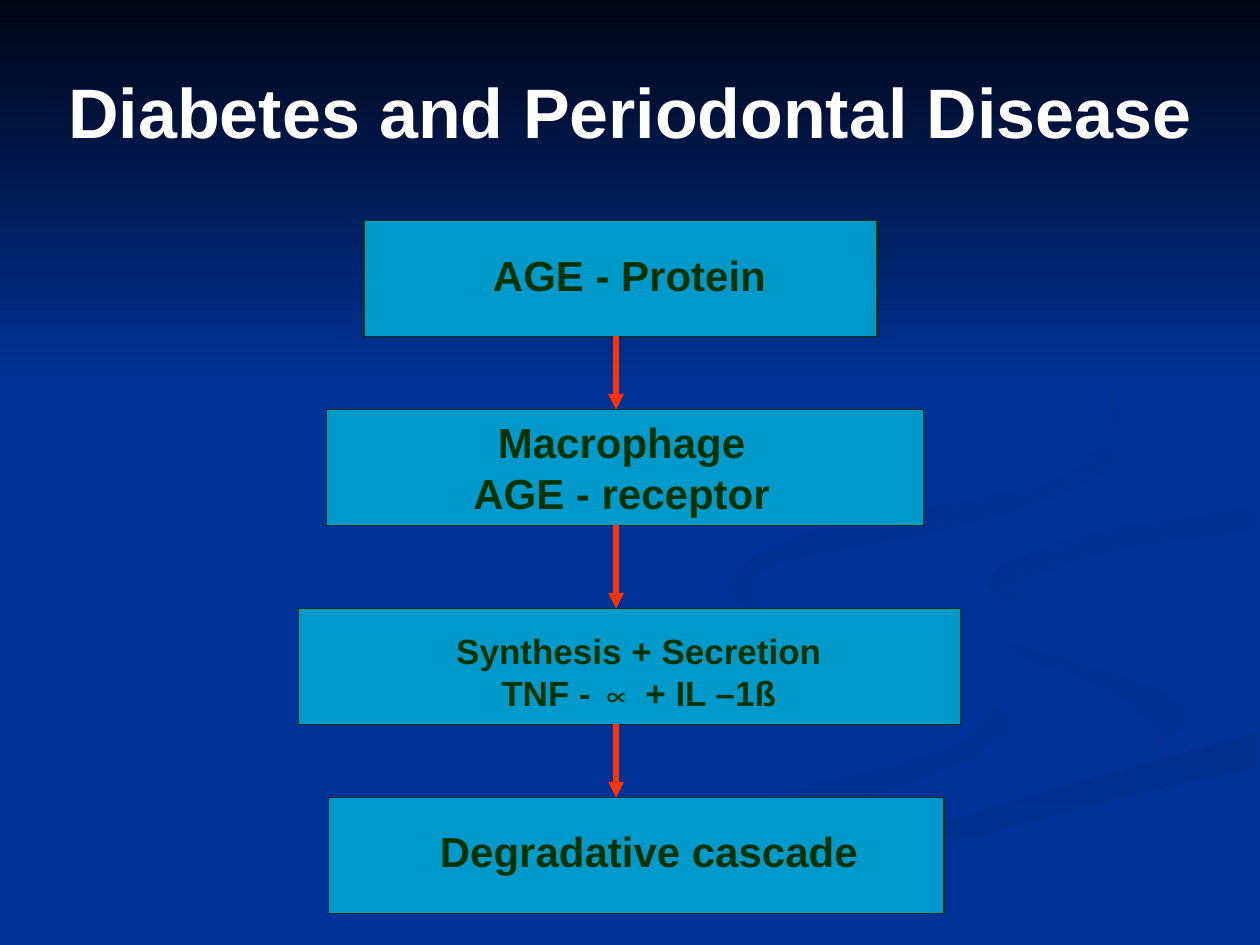
from lxml import etree
from pptx import Presentation
from pptx.dml.color import RGBColor
from pptx.enum.shapes import MSO_CONNECTOR, MSO_SHAPE
from pptx.enum.text import MSO_ANCHOR, PP_ALIGN
from pptx.oxml.ns import qn
from pptx.util import Cm, Pt

STRAIGHT = MSO_CONNECTOR.STRAIGHT
RECT = MSO_SHAPE.RECTANGLE
CENTER = PP_ALIGN.CENTER
TOP, MIDDLE = MSO_ANCHOR.TOP, MSO_ANCHOR.MIDDLE

BLUE = RGBColor.from_string("003399")
NIGHT = RGBColor.from_string("000514")
SHADE = RGBColor.from_string("003193")
DEEP = RGBColor.from_string("002F8C")
DIM = RGBColor.from_string("003091")
DUSK = RGBColor.from_string("002F8E")
TEAL = RGBColor.from_string("0099CC")
GREEN = RGBColor.from_string("003300")
RED = RGBColor.from_string("FF3300")
WHITE = RGBColor.from_string("FFFFFF")

TITLE = "Diabetes and Periodontal Disease"
STEPS = [
    ("AGE - Protein", 24, (7.34, 4.45, 10.34), (8.46, 4.9, 8.46, 1.27)),
    ("Macrophage AGE - receptor", 24, (6.58, 8.26, 12.04), (9.14, 8.28, 6.78, 2.29)),
    ("Synthesis + Secretion TNF - ∝ + IL –1ß", 20, (6.02, 12.27, 13.34), (8.46, 12.57, 8.84, 1.96)),
    ("Degradative cascade", 24, (6.63, 16.08, 12.4), (7.72, 16.51, 10.72, 1.27)),
]
STEP_H = 2.33
ARROW_X = 12.42

UNIT = Cm(2.54) / 100
CUTS = 6
WAVES = [
    (SHADE, BLUE, 180,
     [(781, 553), (800, 581), (721, 623), (532, 674), (361, 749)],
     [(300, 749), (499, 661), (739, 598), (785, 562), (781, 553)]),
    (BLUE, SHADE, 45,
     [(724, 464), (758, 498), (888, 535), (943, 570), (894, 605)],
     [(894, 605), (918, 581), (868, 544), (746, 500), (724, 464)]),
    (DEEP, BLUE, 90,
     [(503, 749), (630, 693), (797, 638), (998, 581)],
     [(998, 609), (821, 651), (649, 710), (571, 749)]),
    (DIM, BLUE, 45,
     [(998, 402), (865, 424), (781, 460), (826, 496)],
     [(826, 496), (809, 466), (878, 439), (998, 420)]),
    (DUSK, BLUE, 45,
     [(762, 233), (864, 291), (889, 362), (786, 412), (605, 452), (622, 500)],
     [(622, 500), (577, 462), (649, 420), (842, 378), (876, 306), (762, 233)]),
]


def put(item, values):
    for key, value in values.items():
        setattr(item, key, value)


def curve(points):
    padded = [points[0], *points, points[-1]]
    for a, b, c, d in zip(padded, padded[1:], padded[2:], padded[3:]):
        for cut in range(CUTS):
            t = cut / CUTS
            yield tuple(
                q + t * ((r - p) + t * ((2 * p - 5 * q + 4 * r - s) + t * (3 * q - 3 * r + s - p))) / 2
                for p, q, r, s in zip(a, b, c, d))
    yield points[-1]


def fade(shape, first, last, angle):
    shape.shadow.inherit = False
    shape.line.fill.background()
    shape.fill.gradient()
    shape.fill.gradient_angle = (360 - angle) % 360
    for stop, color in zip(shape.fill.gradient_stops, (first, last)):
        stop.color.rgb = color


def wave(shapes, first, last, angle, out, back):
    points = [*curve(out), *curve(back)]
    build = shapes.build_freeform(*points[0], scale=UNIT)
    build.add_line_segments(points[1:], close=True)
    fade(build.convert_to_shape(), first, last, angle)


def label(shapes, text, size, color, area, anchor):
    frame = shapes.add_textbox(*map(Cm, area)).text_frame
    put(frame, {"word_wrap": True, "vertical_anchor": anchor})
    line = frame.paragraphs[0]
    line.alignment = CENTER
    run = line.add_run()
    run.text = text
    put(run.font, {"name": "Arial", "size": Pt(size), "bold": True})
    run.font.color.rgb = color


def box(shapes, left, top, width):
    shape = shapes.add_shape(RECT, Cm(left), Cm(top), Cm(width), Cm(STEP_H))
    shape.shadow.inherit = False
    shape.fill.solid()
    shape.fill.fore_color.rgb = TEAL
    shape.line.color.rgb = GREEN
    shape.line.width = Pt(0.75)


def arrow(shapes, start, end):
    link = shapes.add_connector(STRAIGHT, Cm(ARROW_X), Cm(start), Cm(ARROW_X), Cm(end))
    link.line.color.rgb = RED
    link.line.width = Pt(3)
    props = link._element.spPr
    etree.SubElement(props.find(qn("a:ln")), qn("a:tailEnd"), type="triangle")
    etree.SubElement(props, qn("a:effectLst"))


def main():
    deck = Presentation()
    put(deck, {"slide_width": Cm(25.4), "slide_height": Cm(19.05)})
    slide = deck.slides.add_slide(deck.slide_layouts[6])
    slide.background.fill.solid()
    slide.background.fill.fore_color.rgb = BLUE
    shapes = slide.shapes
    for item in WAVES:
        wave(shapes, *item)
    fade(shapes.add_shape(RECT, 0, 0, Cm(25.4), Cm(7.82)), NIGHT, BLUE, 90)
    label(shapes, TITLE, 40, WHITE, (0.56, 1.07, 24.28, 2.33), MIDDLE)
    for text, size, place, area in STEPS:
        box(shapes, *place)
        label(shapes, text, size, GREEN, area, TOP)
    tops = [place[1] for _, _, place, _ in STEPS]
    for top, below in zip(tops, tops[1:]):
        arrow(shapes, top + STEP_H, below)
    deck.save("out.pptx")


if __name__ == "__main__":
    main()
